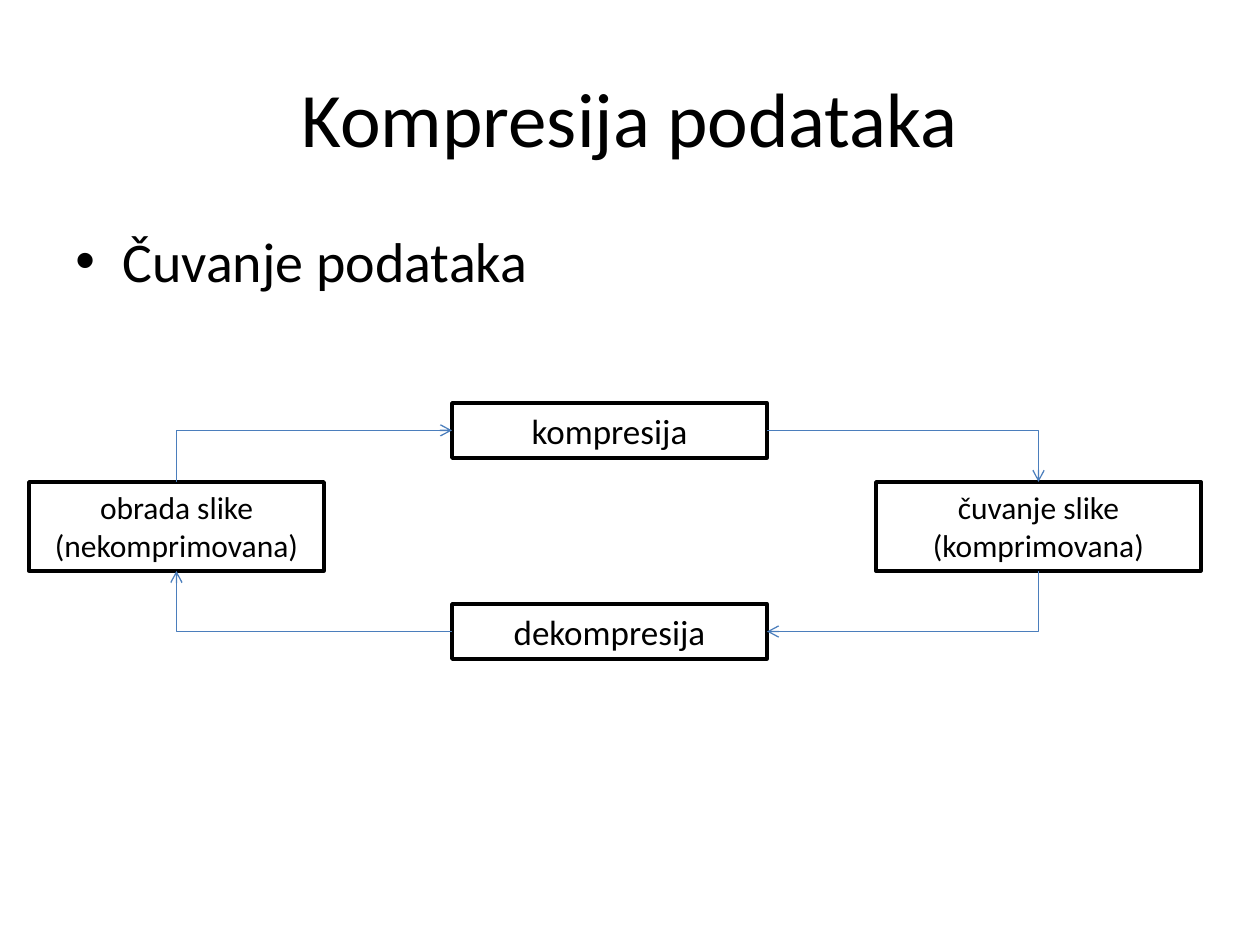
import pptx
import pptx.dml.color
import pptx.enum.shapes
import pptx.enum.text
import pptx.oxml
import pptx.oxml.ns
import pptx.util

BLACK = pptx.dml.color.RGBColor(0x00, 0x00, 0x00)
WHITE = pptx.dml.color.RGBColor(0xFF, 0xFF, 0xFF)
BLUE = pptx.dml.color.RGBColor(0x4B, 0x7E, 0xBC)
EMU_PER_PX = 914400 / 126
ANCHOR = pptx.enum.text.MSO_ANCHOR
ALIGN = pptx.enum.text.PP_ALIGN


def px(length):
    return pptx.util.Emu(round(length * EMU_PER_PX))


def add_xml(parent, tag, **attributes):
    element = pptx.oxml.parse_xml(f"<a:{tag} {pptx.oxml.ns.nsdecls('a')}/>")
    for name, value in attributes.items():
        element.set(name, value)
    parent.append(element)


class Diagram:
    font = "Calibri"

    def __init__(self, slide):
        self.slide = slide

    def add_lines(self, shape, lines, size, align, anchor):
        frame = shape.text_frame
        frame.word_wrap = True
        frame.vertical_anchor = anchor
        for index, line in enumerate(lines):
            paragraph = frame.add_paragraph() if index else frame.paragraphs[0]
            paragraph.alignment = align
            run = paragraph.add_run()
            run.text = line
            run.font.name = self.font
            run.font.size = pptx.util.Pt(size)
            run.font.color.rgb = BLACK
        return frame

    def title(self, text, left, top, width, height):
        heading = self.slide.shapes.add_textbox(*map(px, (left, top, width, height)))
        self.add_lines(heading, [text], 44, ALIGN.CENTER, ANCHOR.MIDDLE)

    def bullet(self, text, left, top, width, height, indent):
        point = self.slide.shapes.add_textbox(*map(px, (left, top, width, height)))
        frame = self.add_lines(point, [text], 32, ALIGN.LEFT, ANCHOR.TOP)
        paragraph = frame.paragraphs[0]
        paragraph.space_before = pptx.util.Pt(6.4)
        properties = paragraph._p.get_or_add_pPr()
        properties.set("marL", str(px(indent)))
        properties.set("indent", str(-px(indent)))
        add_xml(properties, "buFont", typeface="Arial")
        add_xml(properties, "buChar", char="•")

    def box(self, lines, size, left, top, width, height):
        step = self.slide.shapes.add_shape(
            pptx.enum.shapes.MSO_SHAPE.RECTANGLE, *map(px, (left, top, width, height)))
        step.shadow.inherit = False
        step.fill.solid()
        step.fill.fore_color.rgb = WHITE
        step.line.color.rgb = BLACK
        step.line.width = pptx.util.Pt(2)
        frame = self.add_lines(step, lines, size, ALIGN.CENTER, ANCHOR.TOP)
        frame.auto_size = pptx.enum.text.MSO_AUTO_SIZE.SHAPE_TO_FIT_TEXT
        return step

    def bent_arrow(self, start, end, vertical_first=False):
        ends = [start, end]
        if vertical_first:
            middle_x = (start[0] + end[0]) // 2
            middle_y = (start[1] + end[1]) // 2
            ends = [(middle_x + y - middle_y, middle_y - x + middle_x) for x, y in ends]
        arrow = self.slide.shapes.add_connector(
            pptx.enum.shapes.MSO_CONNECTOR.ELBOW, *ends[0], *ends[1])
        properties = arrow._element.spPr
        properties.prstGeom.set("prst", "bentConnector2")
        if vertical_first:
            properties.xfrm.set("rot", "5400000")
        arrow.line.color.rgb = BLUE
        arrow.line.width = pptx.util.Pt(0.75)
        add_xml(arrow.line._get_or_add_ln(), "tailEnd", type="arrow")
        add_xml(properties, "effectLst")


def left_side(step):
    return step.left, step.top + step.height // 2


def right_side(step):
    return step.left + step.width, step.top + step.height // 2


def top_side(step):
    return step.left + step.width // 2, step.top


def bottom_side(step):
    return step.left + step.width // 2, step.top + step.height


def main():
    presentation = pptx.Presentation()
    presentation.slide_width, presentation.slide_height = px(1260), px(945)
    diagram = Diagram(presentation.slides.add_slide(presentation.slide_layouts[6]))

    diagram.title("Kompresija podataka", 63, 38, 1134, 157)
    diagram.bullet("Čuvanje podataka", 63, 220, 1134, 75, 47)

    processing = diagram.box(["obrada slike", "(nekomprimovana)"], 18, 29, 482, 295, 89)
    compression = diagram.box(["kompresija"], 20, 452, 403, 315, 55)
    decompression = diagram.box(["dekompresija"], 20, 452, 604, 315, 55)
    storage = diagram.box(["čuvanje slike", "(komprimovana)"], 18, 876, 482, 325, 89)

    diagram.bent_arrow(top_side(processing), left_side(compression), vertical_first=True)
    diagram.bent_arrow(right_side(compression), top_side(storage))
    diagram.bent_arrow(bottom_side(storage), right_side(decompression), vertical_first=True)
    diagram.bent_arrow(left_side(decompression), bottom_side(processing))

    presentation.save("out.pptx")


if __name__ == "__main__":
    main()
